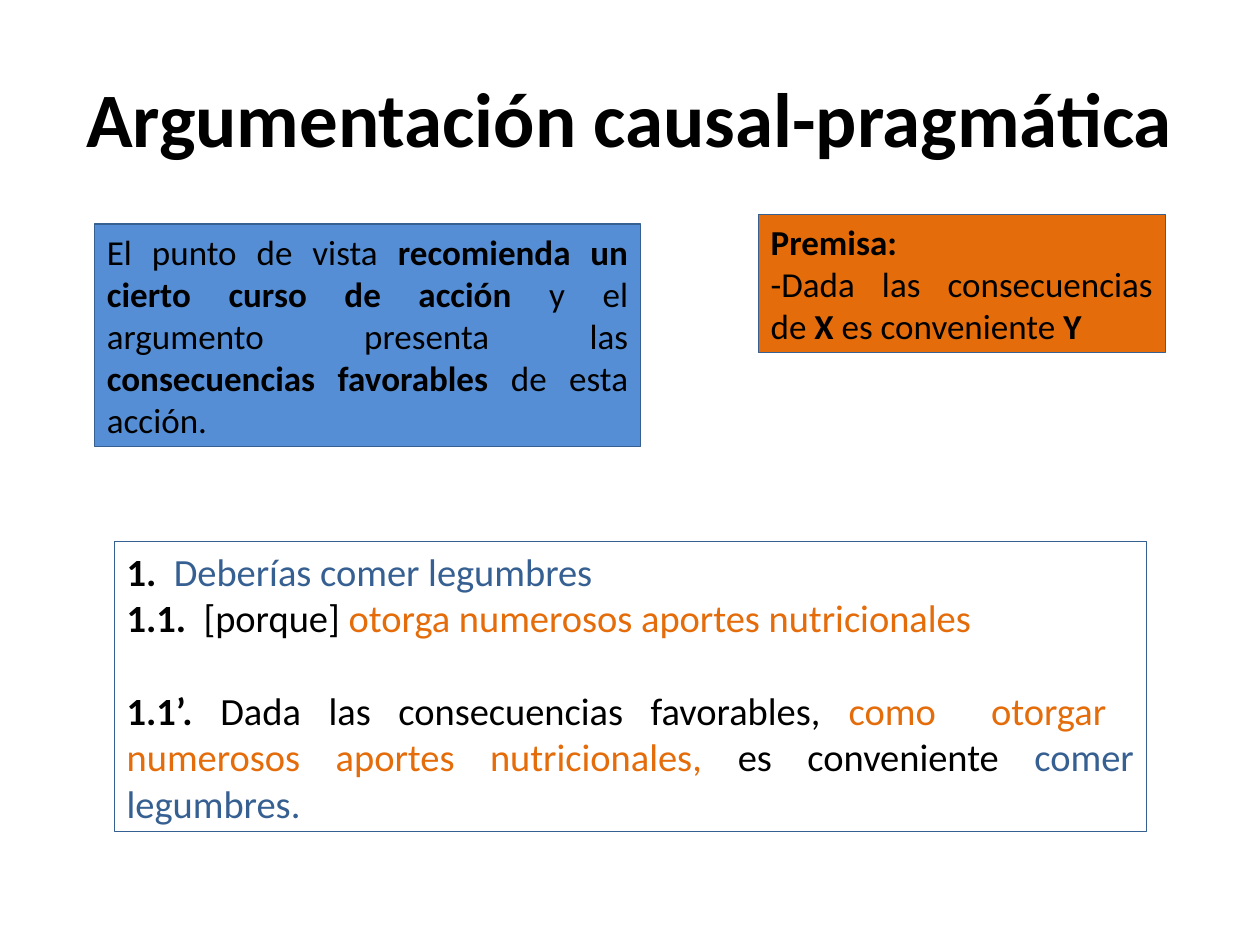
from dataclasses import dataclass

from pptx import Presentation
from pptx import util as u
from pptx.dml.color import RGBColor
from pptx.enum import shapes, text


@dataclass(frozen=True)
class Theme:
    font: str = "Calibri"
    ink: str = "000000"
    paper: str = "FFFFFF"
    blue: str = "558ED5"
    dark_blue: str = "376092"
    orange: str = "E46C0A"
    title_size: float = 44
    body_size: float = 20
    example_size: float = 22
    border: float = 0.75


THEME = Theme()


@dataclass(frozen=True)
class Span:
    words: str
    bold: bool = False
    color: str = THEME.ink


@dataclass(frozen=True)
class Para:
    spans: tuple[Span, ...]
    space_before: float = 0


@dataclass(frozen=True)
class Panel:
    left: float
    top: float
    width: float
    height: float
    fill: str
    size: float
    paras: tuple[Para, ...]


def rgb(color: str) -> RGBColor:
    return RGBColor.from_string(color)


def add_span(para, words: str, *, size: float, bold: bool, color: str) -> None:
    span = para.add_run()
    span.text = words
    span.font.name = THEME.font
    span.font.size = u.Pt(size)
    span.font.bold = bold
    span.font.color.rgb = rgb(color)


def write(box, paras: tuple[Para, ...], *, size: float, align, anchor) -> None:
    frame = box.text_frame
    frame.word_wrap = True
    frame.vertical_anchor = anchor
    for index, item in enumerate(paras):
        para = frame.add_paragraph() if index else frame.paragraphs[0]
        para.alignment = align
        if item.space_before:
            para.space_before = u.Pt(item.space_before)
        for span in item.spans:
            add_span(para, span.words, size=size, bold=span.bold, color=span.color)


def add_panel(page, panel: Panel) -> None:
    place = map(u.Pt, (panel.left, panel.top, panel.width, panel.height))
    box = page.shapes.add_shape(shapes.MSO_SHAPE.RECTANGLE, *place)
    box.shadow.inherit = False
    box.fill.solid()
    box.fill.fore_color.rgb = rgb(panel.fill)
    box.line.color.rgb = rgb(THEME.dark_blue)
    box.line.width = u.Pt(THEME.border)
    write(box, panel.paras, size=panel.size,
          align=text.PP_ALIGN.JUSTIFY, anchor=text.MSO_ANCHOR.TOP)
    box.text_frame.auto_size = text.MSO_AUTO_SIZE.SHAPE_TO_FIT_TEXT


def add_title(page, words: str) -> None:
    box = page.shapes.add_textbox(u.Pt(36), u.Pt(21.6), u.Pt(648), u.Pt(90))
    write(box, (Para((Span(words, bold=True),)),), size=THEME.title_size,
          align=text.PP_ALIGN.CENTER, anchor=text.MSO_ANCHOR.MIDDLE)


# Definition of the argument type
DEFINITION = Panel(54, 128, 312, 127.2, THEME.blue, THEME.body_size, (
    Para((
        Span("El punto de vista "),
        Span("recomienda un cierto curso de acción ", bold=True),
        Span("y el argumento presenta las "),
        Span("consecuencias favorables ", bold=True),
        Span("de esta acción."),
    )),
))

# General form of the premise
PREMISE = Panel(433.3, 122.4, 232.6, 79.2, THEME.orange, THEME.body_size, (
    Para((Span("Premisa:", bold=True),)),
    Para((
        Span("-Dada las consecuencias de "),
        Span("X", bold=True),
        Span(" es conveniente "),
        Span("Y", bold=True),
    )),
))

# Worked example: standpoint, reason and linking premise
EXAMPLE = Panel(65.3, 309.6, 589.7, 165.6, THEME.paper, THEME.example_size, (
    Para((
        Span("1.  ", bold=True),
        Span("Deberías comer legumbres", color=THEME.dark_blue),
    )),
    Para((
        Span("1.1.  ", bold=True),
        Span("[porque] "),
        Span("otorga numerosos aportes nutricionales", color=THEME.orange),
    )),
    Para((
        Span("1.1’. ", bold=True),
        Span("Dada las consecuencias favorables, "),
        Span("como  otorgar  numerosos aportes nutricionales, ", color=THEME.orange),
        Span("es conveniente "),
        Span("comer legumbres.", color=THEME.dark_blue),
    ), space_before=26.8),
))


def main() -> None:
    deck = Presentation()
    deck.slide_width, deck.slide_height = u.Pt(720), u.Pt(540)
    page = deck.slides.add_slide(deck.slide_layouts[6])
    add_title(page, "Argumentación causal-pragmática")
    for panel in (DEFINITION, PREMISE, EXAMPLE):
        add_panel(page, panel)
    deck.save("out.pptx")


if __name__ == "__main__":
    main()
